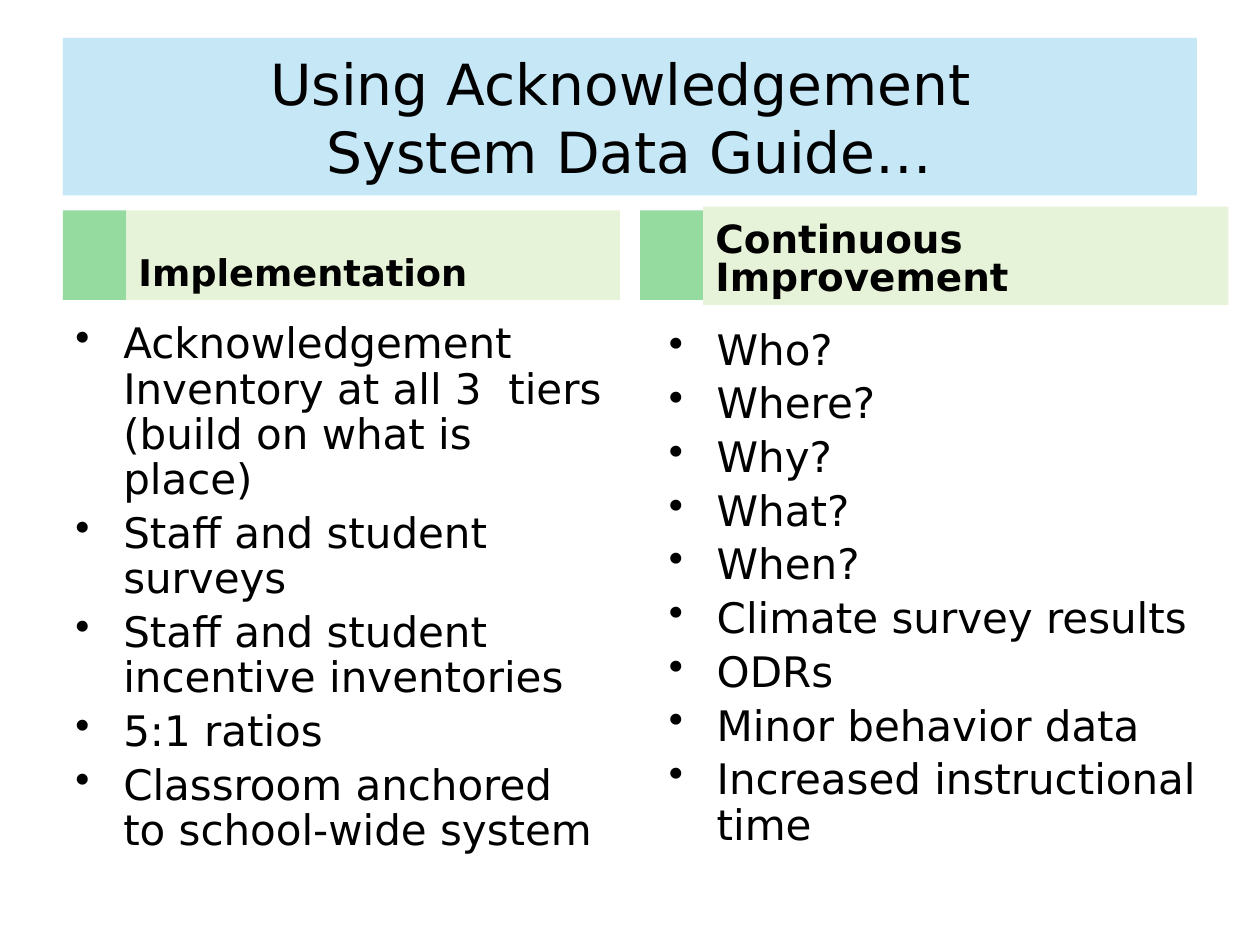
from lxml import etree
from pptx import Presentation
from pptx import util as u
from pptx.dml.color import RGBColor
from pptx.enum import shapes, text
from pptx.oxml.ns import qn

FONT = "DejaVu Sans"
COLORS = {"title": "A9DCF2", "accent": "95DA9F", "heading": "E7F3D8", "text": "000000"}
ACCENT_WIDTH = 0.5
INDENT = u.Inches(0.38)

IMPLEMENTATION = [
    "Acknowledgement Inventory at all 3  tiers (build on what is place)",
    "Staff and student surveys",
    "Staff and student incentive inventories",
    "5:1 ratios",
    "Classroom anchored to school-wide system",
]
IMPROVEMENT = [
    "Who?", "Where?", "Why?", "What?", "When?", "Climate survey results",
    "ODRs", "Minor behavior data", "Increased instructional time",
]


def add_panel(page, box, color):
    """Add a plain filled rectangle."""
    panel = page.shapes.add_shape(shapes.MSO_SHAPE.RECTANGLE, *map(u.Inches, box))
    panel.shadow.inherit = False
    panel.fill.solid()
    panel.fill.fore_color.rgb = RGBColor.from_string(COLORS[color])
    panel.line.fill.background()
    return panel


def format_para(para, size, align=text.PP_ALIGN.LEFT, bold=False):
    para.alignment = align
    for span in para.runs:
        span.font.name = FONT
        span.font.size = u.Pt(size)
        span.font.bold = bold
        span.font.color.rgb = RGBColor.from_string(COLORS["text"])


def add_bullet(para):
    props = para._p.get_or_add_pPr()
    props.set("marL", str(INDENT))
    props.set("indent", str(-INDENT))
    etree.SubElement(props, qn("a:buChar")).set("char", "•")


def add_title(page, box, wording):
    panel = add_panel(page, box, "title")
    color = panel.fill._xPr.find(qn("a:solidFill"))[0]
    etree.SubElement(color, qn("a:alpha")).set("val", "67000")
    frame = panel.text_frame
    frame.word_wrap = True
    frame.vertical_anchor = text.MSO_ANCHOR.MIDDLE
    frame.paragraphs[0].text = wording
    format_para(frame.paragraphs[0], 32.4, text.PP_ALIGN.CENTER)


def add_heading(page, box, wording, size, line_spacing):
    panel = add_panel(page, box, "heading")
    frame = panel.text_frame
    frame.word_wrap = True
    frame.vertical_anchor = text.MSO_ANCHOR.BOTTOM
    frame.text = wording
    para = frame.paragraphs[0]
    para.line_spacing = line_spacing
    format_para(para, size, bold=True)


def add_list(page, box, items):
    frame = page.shapes.add_textbox(*map(u.Inches, box)).text_frame
    frame.word_wrap = True
    frame.text = "\n".join(items)
    for number, para in enumerate(frame.paragraphs):
        para.line_spacing = 0.9
        para.space_before = u.Pt(4.8 if number else 0)
        format_para(para, 24)
        add_bullet(para)


def main():
    deck = Presentation()
    deck.slide_width, deck.slide_height = u.Inches(10), u.Inches(7.5)
    page = deck.slides.add_slide(deck.slide_layouts[6])

    # Accent squares to the left of the headings
    for left in (0.5, 5.08):
        add_panel(page, (left, 1.67, ACCENT_WIDTH, 0.71), "accent")

    # Column headings
    add_heading(page, (1, 1.67, 3.92, 0.71), "Implementation", 21, 1.0)
    add_heading(page, (5.58, 1.64, 4.17, 0.78), "Continuous Improvement", 22.2, 0.8)

    # Column lists
    add_list(page, (0.5, 2.51, 4.42, 4.35), IMPLEMENTATION)
    add_list(page, (5.21, 2.56, 4.42, 4.32), IMPROVEMENT)

    # Title band
    add_title(page, (0.5, 0.3, 9, 1.25), "Using Acknowledgement \vSystem Data Guide…")

    deck.save("out.pptx")


if __name__ == "__main__":
    main()
